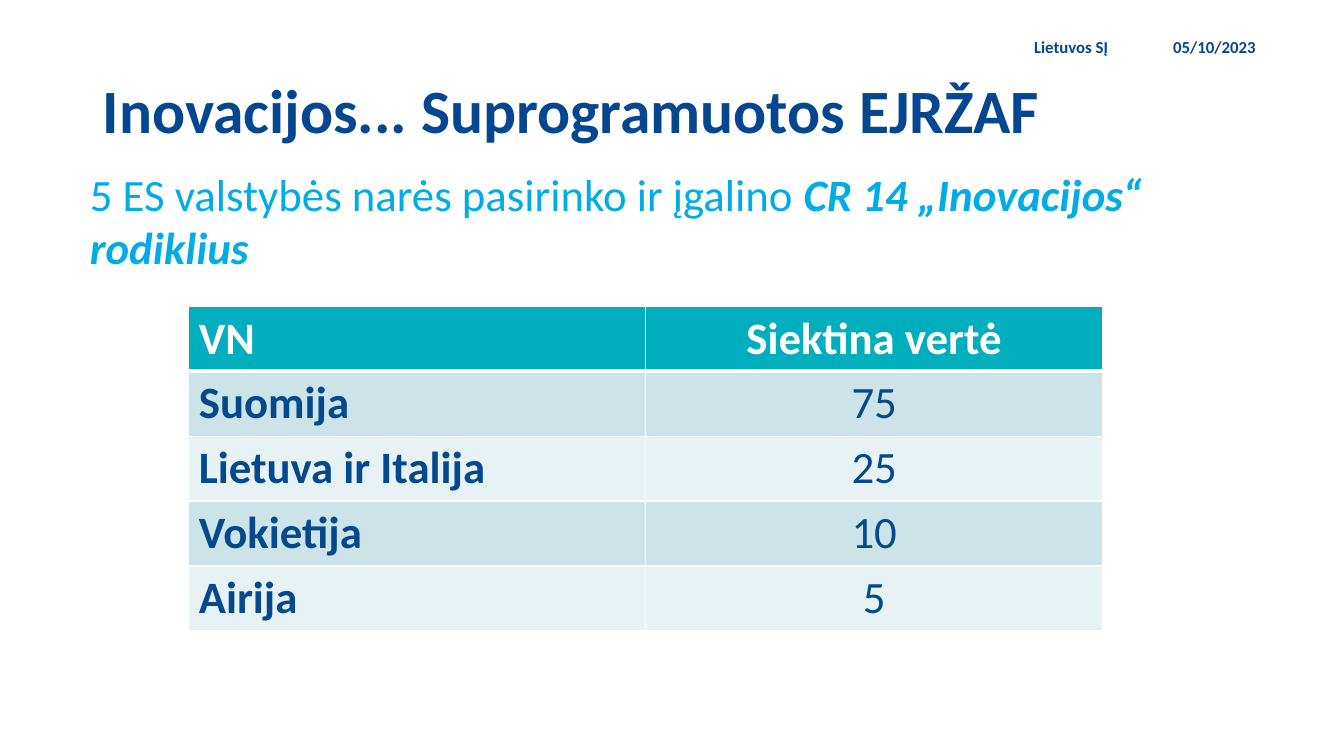
from dataclasses import dataclass

from lxml import etree
from pptx import Presentation
from pptx import util as u
from pptx.dml.color import RGBColor
from pptx.enum import text
from pptx.oxml import ns

WIDTH, HEIGHT = u.Inches(13.33), u.Inches(7.5)
LEFT, CENTER, RIGHT = text.PP_ALIGN.LEFT, text.PP_ALIGN.CENTER, text.PP_ALIGN.RIGHT


@dataclass(frozen=True)
class Theme:
    font: str = "Calibri"
    navy: str = "054690"
    cell_navy: str = "04498E"
    sky: str = "00ACE6"
    teal: str = "00AEBE"
    bands: tuple = ("CCE3E8", "E7F2F4")
    white: str = "FFFFFF"
    title_size: int = 44
    text_size: int = 32
    label_size: int = 12


THEME = Theme()


def area(left, top, width, height):
    """Turn percentages of the slide into lengths."""
    return (int(WIDTH * left / 100), int(HEIGHT * top / 100),
            int(WIDTH * width / 100), int(HEIGHT * height / 100))


def place(holder, box):
    holder.left, holder.top, holder.width, holder.height = area(*box)


def write(paragraph, words, size, color, bold=False, italic=False,
          align=LEFT, spacing=1.0):
    """Append one formatted run to a paragraph."""
    paragraph.alignment = align
    paragraph.line_spacing = spacing
    paragraph.space_before = u.Pt(0)
    run = paragraph.add_run()
    run.text = words
    font = run.font
    font.name, font.size = THEME.font, u.Pt(size)
    font.bold, font.italic = bold, italic
    font.color.rgb = RGBColor.from_string(color)


def prepare(frame, anchor):
    frame.word_wrap = True
    frame.auto_size = text.MSO_AUTO_SIZE.NONE
    frame.vertical_anchor = anchor
    return frame.paragraphs[0]


def add_label(slide, words, box, align=LEFT):
    label = slide.shapes.add_textbox(*area(*box))
    paragraph = prepare(label.text_frame, text.MSO_ANCHOR.MIDDLE)
    write(paragraph, words, THEME.label_size, THEME.navy, bold=True, align=align)


def remove_bullet(paragraph):
    properties = paragraph._p.get_or_add_pPr()
    properties.set("marL", "0")
    properties.set("indent", "0")
    etree.SubElement(properties, ns.qn("a:buNone"))


def set_borders(cell, **widths):
    """Draw white cell borders; the fill must be set afterwards."""
    properties = cell._tc.get_or_add_tcPr()
    for side, points in widths.items():
        line = etree.SubElement(properties, ns.qn(f"a:ln{side}"), w=str(u.Pt(points)))
        fill = etree.SubElement(line, ns.qn("a:solidFill"))
        etree.SubElement(fill, ns.qn("a:srgbClr"), val=THEME.white)


def add_target_table(slide, rows, box):
    left, top, width, height = area(*box)
    table = slide.shapes.add_table(len(rows), len(rows[0]), left, top, width, height).table
    for r, values in enumerate(rows):
        header = r == 0
        fill = THEME.teal if header else THEME.bands[(r - 1) % 2]
        for c, value in enumerate(values):
            cell = table.cell(r, c)
            set_borders(cell, L=1, R=1, T=3 if r == 1 else 1, B=3 if header else 1)
            cell.fill.solid()
            cell.fill.fore_color.rgb = RGBColor.from_string(fill)
            write(cell.text_frame.paragraphs[0], value, THEME.text_size,
                  THEME.white if header else THEME.cell_navy,
                  bold=header or c == 0, align=CENTER if c else LEFT)


def main():
    deck = Presentation()
    deck.slide_width, deck.slide_height = WIDTH, HEIGHT
    slide = deck.slides.add_slide(deck.slide_layouts[1])
    title, statement = slide.placeholders

    # Title
    place(title, (6.9, 5.33, 86.25, 19.33))
    heading = prepare(title.text_frame, text.MSO_ANCHOR.MIDDLE)
    write(heading, "Inovacijos... Suprogramuotos EJRŽAF", THEME.title_size,
          THEME.navy, bold=True, spacing=0.9)

    # Date and organisation
    add_label(slide, "05/10/2023", (86.55, 4.53, 9.9, 3.2))
    add_label(slide, "Lietuvos SĮ", (40.05, 4.53, 43.15, 3.2), align=RIGHT)

    # Statement
    place(statement, (5.93, 21.33, 82.3, 30.13))
    sentence = prepare(statement.text_frame, text.MSO_ANCHOR.TOP)
    remove_bullet(sentence)
    write(sentence, "5 ES valstybės narės pasirinko ir įgalino ",
          THEME.text_size, THEME.sky)
    write(sentence, "CR 14 „Inovacijos“ rodiklius", THEME.text_size, THEME.sky,
          bold=True, italic=True)

    # Target values by member state
    targets = [("VN", "Siektina vertė"), ("Suomija", "75"),
               ("Lietuva ir Italija", "25"), ("Vokietija", "10"), ("Airija", "5")]
    add_target_table(slide, targets, (14.05, 40.53, 68, 42))

    deck.save("out.pptx")


if __name__ == "__main__":
    main()
